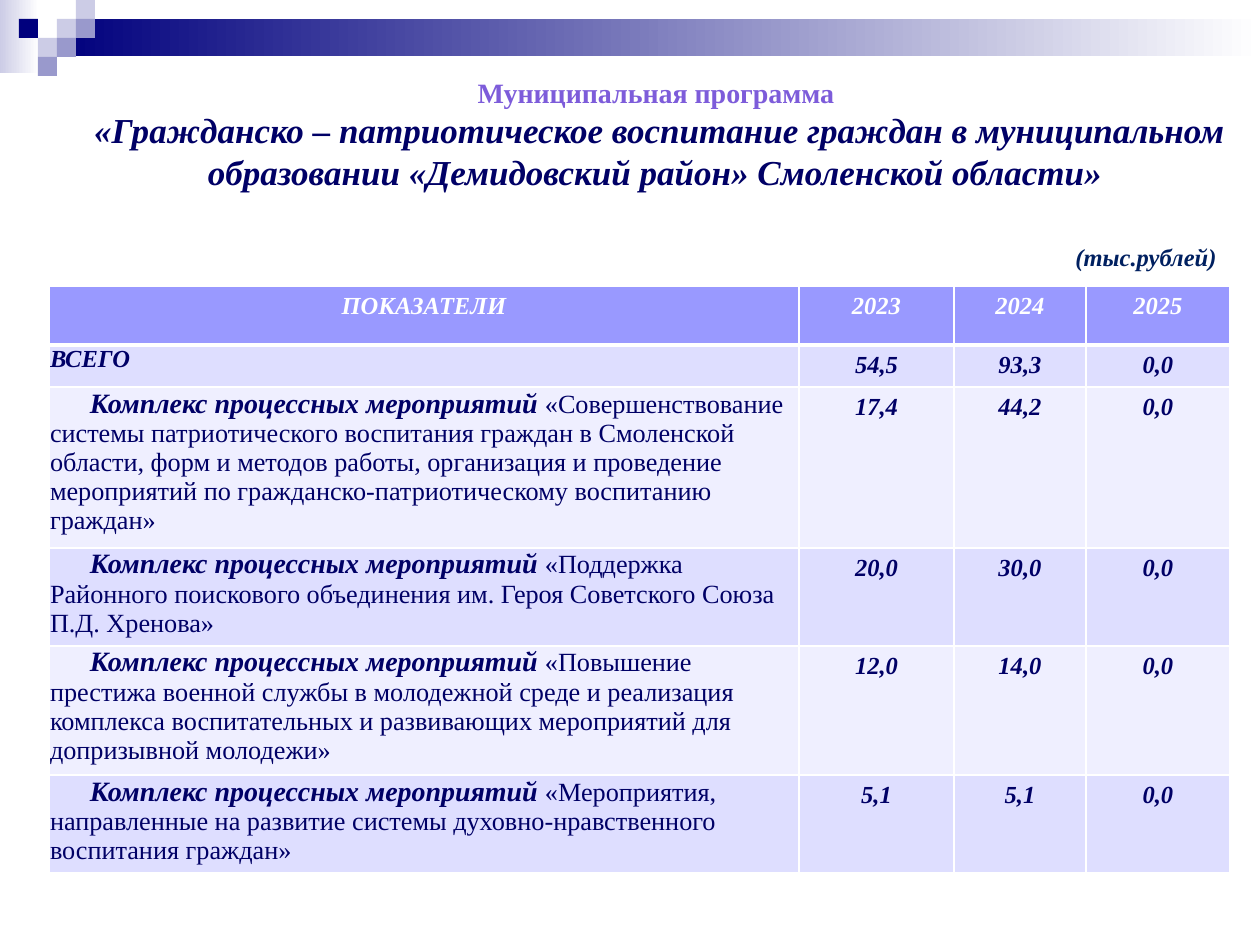
from lxml import etree
from pptx import Presentation
from pptx.dml.color import RGBColor
from pptx.enum.shapes import MSO_SHAPE
from pptx.enum.text import PP_ALIGN
from pptx.oxml.ns import qn
from pptx.util import Pt

PX_PER_INCH = 126
EMU_PER_INCH = 914400
RECT = MSO_SHAPE.RECTANGLE
CENTER, LEFT = PP_ALIGN.CENTER, PP_ALIGN.LEFT

FONT = "Times New Roman"
NAVY, DEEP_BLUE, LAVENDER, MIST = "00007D", "000066", "9999CC", "CCCCE6"
WHITE, HEADER_FILL = "FFFFFF", "9999FF"
BANDS = ("DEDEFF", "EFEFFF")

COLUMNS = (750, 155, 132, 144)
ROW_HEIGHTS = (59, 42, 161, 98, 129, 98)
HEADINGS = ("ПОКАЗАТЕЛИ", "2023", "2024", "2025")
TOTAL = ("ВСЕГО", "54,5", "93,3", "0,0")
MEASURE_LEAD = "Комплекс процессных мероприятий "
MEASURES = (
    ("«Совершенствование системы патриотического воспитания граждан в "
     "Смоленской области, форм и методов работы, организация и проведение "
     "мероприятий по гражданско-патриотическому воспитанию граждан»",
     "17,4", "44,2", "0,0"),
    ("«Поддержка Районного поискового объединения им. Героя Советского "
     "Союза П.Д. Хренова»", "20,0", "30,0", "0,0"),
    ("«Повышение престижа военной службы в молодежной среде и реализация "
     "комплекса воспитательных и развивающих мероприятий для допризывной "
     "молодежи»", "12,0", "14,0", "0,0"),
    ("«Мероприятия, направленные на развитие системы духовно-нравственного "
     "воспитания граждан»", "5,1", "5,1", "0,0"),
)


def px(length):
    return round(length * EMU_PER_INCH / PX_PER_INCH)


def rgb(value):
    return RGBColor.from_string(value)


def add_run(paragraph, text, size, color, bold=True, italic=True):
    run = paragraph.add_run()
    run.text = text
    font = run.font
    font.name, font.size, font.bold, font.italic = FONT, Pt(size), bold, italic
    font.color.rgb = rgb(color)


def add_block(slide, left, top, width, height, *colors):
    """Add a rectangle: one colour is solid, two run from left to right."""
    block = slide.shapes.add_shape(RECT, px(left), px(top), px(width), px(height))
    block.shadow.inherit = False
    block.line.fill.background()
    if len(colors) == 1:
        block.fill.solid()
        block.fill.fore_color.rgb = rgb(colors[0])
    else:
        block.fill.gradient()
        block.fill.gradient_angle = 0
        for stop, position, color in zip(block.fill.gradient_stops, (0, 1), colors):
            stop.position = position
            stop.color.rgb = rgb(color)


def add_banner(slide, left, top, width):
    add_block(slide, left, top, 39, 73, MIST, WHITE)
    add_block(slide, left + 57, top + 19, width - 57, 37, NAVY, WHITE)
    square = 19
    mosaic = ((3, 1, MIST), (4, 0, MIST), (4, 1, LAVENDER), (2, 2, MIST),
              (1, 1, NAVY), (3, 2, LAVENDER), (2, 3, LAVENDER))
    for column, row, color in mosaic:
        add_block(slide, left + column * square, top + row * square,
                  square, square, color)


def add_title(slide, left, top, width, height):
    frame = slide.shapes.add_textbox(
        px(left), px(top), px(width), px(height)).text_frame
    frame.word_wrap = True
    kind = frame.paragraphs[0]
    add_run(kind, "Муниципальная программа ", 16, "7D5CDA", italic=False)
    name = frame.add_paragraph()
    add_run(name, "«Гражданско – патриотическое воспитание граждан в муниципальном "
            "образовании «Демидовский район» Смоленской области» ", 20, DEEP_BLUE)
    kind.alignment = name.alignment = CENTER


def add_unit(slide, left, top, width, height):
    frame = slide.shapes.add_textbox(
        px(left), px(top), px(width), px(height)).text_frame
    frame.word_wrap = False
    add_run(frame.paragraphs[0], "(тыс.рублей)", 14, "002060")


def set_borders(cell, top=1, bottom=1):
    properties = cell._tc.get_or_add_tcPr()
    widths = (("a:lnL", 1), ("a:lnR", 1), ("a:lnT", top), ("a:lnB", bottom))
    for index, (tag, width) in enumerate(widths):
        line = etree.Element(qn(tag), w=str(Pt(width)))
        fill = etree.SubElement(line, qn("a:solidFill"))
        etree.SubElement(fill, qn("a:srgbClr"), val=WHITE)
        properties.insert(index, line)


def style_cell(cell, row, column):
    cell.fill.solid()
    cell.fill.fore_color.rgb = rgb(BANDS[(row - 1) % 2] if row else HEADER_FILL)
    set_borders(cell, top=3 if row == 1 else 1, bottom=1 if row else 3)
    is_label = row > 0 and column == 0
    if is_label:
        cell.margin_left = cell.margin_top = cell.margin_right = px(1)
        cell.margin_bottom = 0
    cell.text_frame.paragraphs[0].alignment = LEFT if is_label else CENTER


def add_budget_table(slide, left, top):
    rows = (HEADINGS, TOTAL) + MEASURES
    table = slide.shapes.add_table(
        len(rows), len(COLUMNS), px(left), px(top),
        px(sum(COLUMNS)), px(sum(ROW_HEIGHTS))).table
    for column, width in zip(table.columns, COLUMNS):
        column.width = px(width)
    for row, height in zip(table.rows, ROW_HEIGHTS):
        row.height = px(height)
    for r, values in enumerate(rows):
        for c, value in enumerate(values):
            cell = table.cell(r, c)
            style_cell(cell, r, c)
            paragraph = cell.text_frame.paragraphs[0]
            if r > 1 and c == 0:
                paragraph._p.get_or_add_pPr().set("indent", str(px(40)))
                add_run(paragraph, MEASURE_LEAD, 16, DEEP_BLUE)
                add_run(paragraph, value, 15, DEEP_BLUE, bold=False, italic=False)
            else:
                add_run(paragraph, value, 14, DEEP_BLUE if r else WHITE)


def main():
    presentation = Presentation()
    presentation.slide_width, presentation.slide_height = px(1260), px(945)
    slide = presentation.slides.add_slide(presentation.slide_layouts[6])
    add_banner(slide, 0, 0, 1260)
    add_title(slide, 59, 69, 1201, 131)
    add_budget_table(slide, 49, 286)
    add_unit(slide, 1063, 236, 168, 43)
    presentation.save("out.pptx")


if __name__ == "__main__":
    main()
